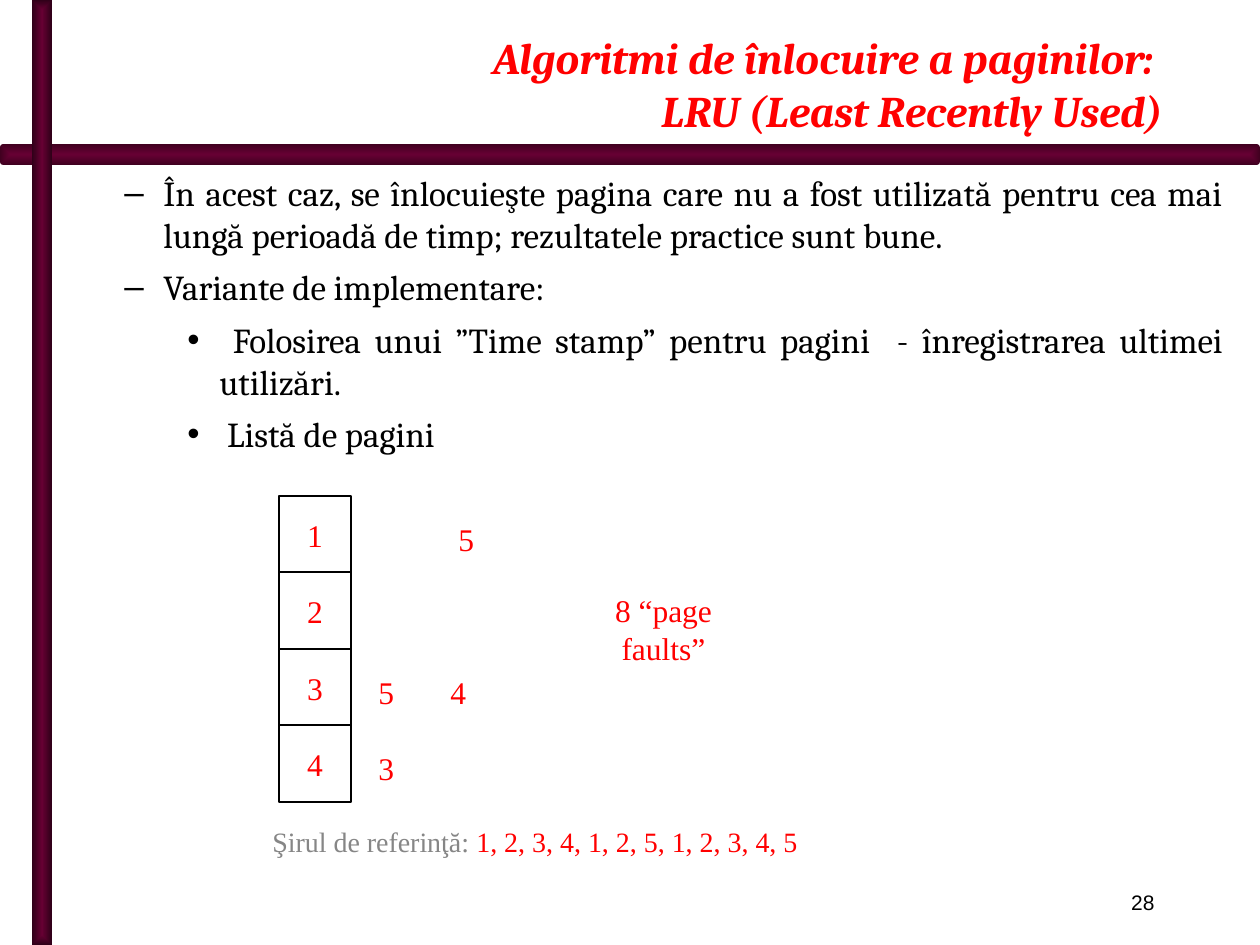
from lxml.etree import SubElement
from pptx import Presentation
from pptx.dml.color import RGBColor
from pptx.enum.shapes import MSO_SHAPE as Shape
from pptx.enum.text import MSO_ANCHOR as Anchor, PP_ALIGN as Align
from pptx.oxml.ns import qn
from pptx.util import Emu, Pt

EMU_PER_PX = 914400 // 126
BLACK = RGBColor(0x00, 0x00, 0x00)
WHITE = RGBColor(0xFF, 0xFF, 0xFF)
RED = RGBColor(0xFF, 0x00, 0x00)
GRAY = RGBColor(0x86, 0x86, 0x86)
PLUM = RGBColor(0x66, 0x00, 0x33)
DARK_PLUM = RGBColor(0x41, 0x00, 0x20)
DEEP_PLUM = RGBColor(0x2F, 0x00, 0x18)


def px(length):
    return Emu(length * EMU_PER_PX)


class SlideBuilder:
    heading_font = "Cambria"
    diagram_font = "Times New Roman"
    number_font = "Arial"

    def __init__(self, slide):
        self.slide = slide

    def style(self, run, font, size, color, emphasis=False):
        run.font.name = font
        run.font.size = Pt(size)
        run.font.color.rgb = color
        run.font.bold = run.font.italic = emphasis

    def bar(self, kind, box, edge):
        bar = self.slide.shapes.add_shape(kind, *map(px, box))
        bar.shadow.inherit = False
        bar.line.fill.background()
        bar.fill.gradient()
        for stop, color, position in zip(bar.fill.gradient_stops, (PLUM, edge), (0, 1)):
            stop.color.rgb = color
            stop.position = position
        gradient = bar.element.spPr.find(qn("a:gradFill"))
        gradient.remove(gradient.find(qn("a:lin")))
        shading = SubElement(gradient, qn("a:path"), {"path": "shape"})
        SubElement(shading, qn("a:fillToRect"), dict.fromkeys("ltrb", "50000"))

    def frame(self, box, anchor=Anchor.TOP):
        frame = self.slide.shapes.add_textbox(*map(px, box)).text_frame
        frame.word_wrap = True
        frame.vertical_anchor = anchor
        return frame

    def label(self, box, text, align=Align.CENTER, anchor=Anchor.MIDDLE,
              font=diagram_font, size=18, color=RED, emphasis=False):
        frame = self.frame(box, anchor)
        frame.text = text
        paragraph = frame.paragraphs[0]
        paragraph.alignment = align
        for run in paragraph.runs:
            self.style(run, font, size, color, emphasis)

    def bullets(self, box, items):
        frame = self.frame(box)
        for index, (mark, margin, indent, text) in enumerate(items):
            paragraph = frame.add_paragraph() if index else frame.paragraphs[0]
            paragraph.text = text
            paragraph.alignment = Align.JUSTIFY
            paragraph.space_before = paragraph.space_after = Pt(3)
            self.style(paragraph.runs[0], self.heading_font, 20, BLACK)
            properties = paragraph._p.get_or_add_pPr()
            properties.set("marL", str(px(margin)))
            properties.set("indent", str(px(-indent)))
            SubElement(properties, qn("a:buFont"), typeface=self.number_font)
            SubElement(properties, qn("a:buChar"), char=mark)

    def cell(self, box, text):
        cell = self.slide.shapes.add_shape(Shape.RECTANGLE, *map(px, box))
        cell.shadow.inherit = False
        cell.fill.solid()
        cell.fill.fore_color.rgb = WHITE
        cell.line.color.rgb = BLACK
        cell.line.width = Pt(0.75)
        cell.text_frame.text = text
        cell.text_frame.vertical_anchor = Anchor.MIDDLE
        paragraph = cell.text_frame.paragraphs[0]
        paragraph.alignment = Align.CENTER
        self.style(paragraph.runs[0], self.diagram_font, 18, RED)

    def colored_line(self, box, parts):
        paragraph = self.frame(box).paragraphs[0]
        for text, color in parts:
            run = paragraph.add_run()
            run.text = text
            self.style(run, self.diagram_font, 16, color)


def main():
    deck = Presentation()
    deck.slide_width, deck.slide_height = px(1260), px(945)
    lru = SlideBuilder(deck.slides.add_slide(deck.slide_layouts[6]))

    lru.bar(Shape.ROUNDED_RECTANGLE, (0, 144, 1260, 21), DARK_PLUM)
    lru.bar(Shape.RECTANGLE, (32, 0, 20, 945), DEEP_PLUM)
    lru.label((95, 883, 1072, 38), "28", Align.RIGHT, Anchor.TOP,
              lru.number_font, 12, BLACK)
    lru.label((105, 21, 1070, 121),
              "Algoritmi de înlocuire a paginilor: \vLRU (Least Recently Used)",
              Align.RIGHT, Anchor.BOTTOM, lru.heading_font, 25, RED, True)

    dash, dot = ("–", 102, 39), ("•", 158, 32)
    lru.bullets((49, 165, 1187, 352), [
        (*dash, "În acest caz, se înlocuieşte pagina care nu a fost utilizată pentru "
                "cea mai lungă perioadă de timp; rezultatele practice sunt bune."),
        (*dash, "Variante de implementare:"),
        (*dot, " Folosirea unui ”Time stamp” pentru pagini  - înregistrarea "
               "ultimei utilizări."),
        (*dot, " Listă de pagini"),
    ])

    frame_tops = [496 + 153 * row // 2 for row in range(4)]
    for number, top in enumerate(frame_tops, 1):
        lru.cell((279, top, 72, 77), str(number))
    for row, left, page in ((0, 446, "5"), (2, 438, "4"), (3, 366, "3"), (2, 366, "5")):
        lru.label((left, frame_tops[row] + 18, 40, 50), page)

    lru.label((559, 604, 209, 50), "8 “page faults”")
    lru.colored_line((260, 818, 717, 57), [
        ("Şirul de referinţă: ", GRAY),
        ("1, 2, 3, 4, 1, 2, 5, 1, 2, 3, 4, 5", RED),
    ])
    deck.save("out.pptx")


if __name__ == "__main__":
    main()
